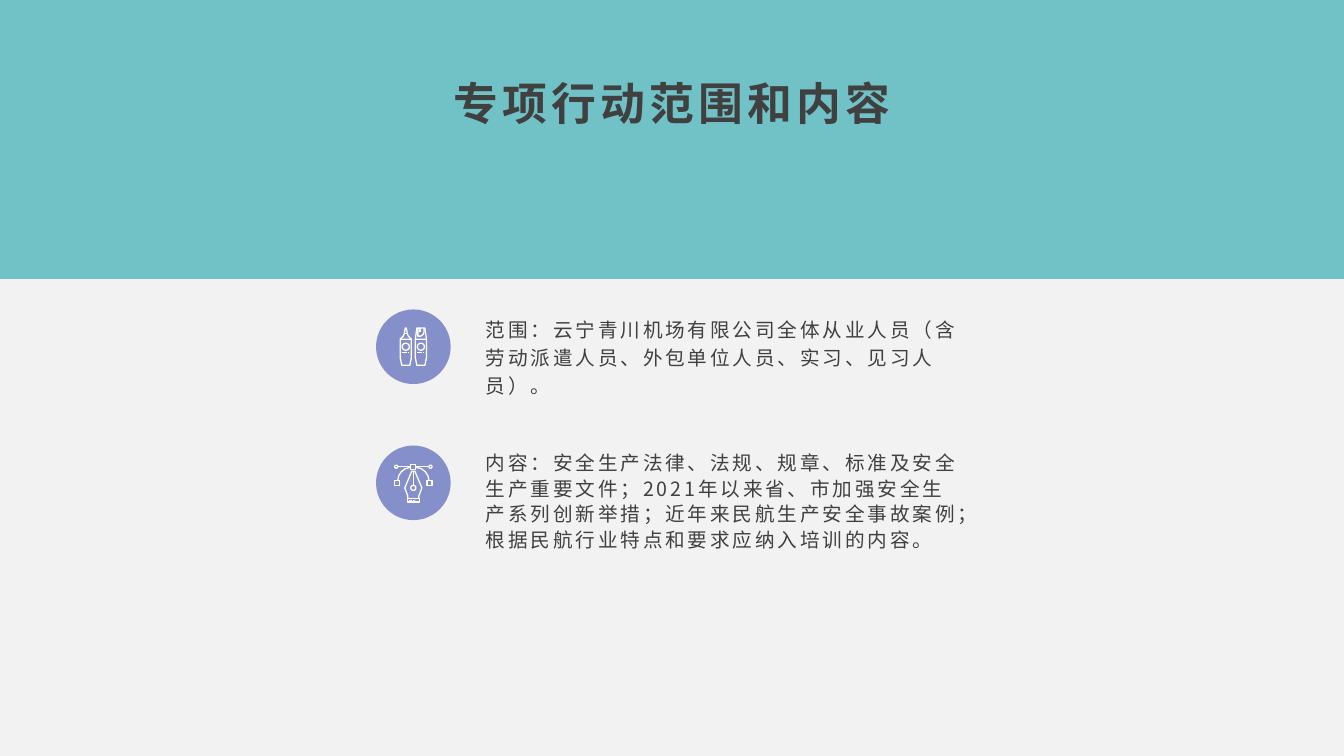
from dataclasses import dataclass
from math import cos, pi, sin

from lxml.etree import SubElement
from pptx import Presentation
from pptx.dml.color import RGBColor
from pptx.enum.shapes import MSO_SHAPE
from pptx.enum.text import MSO_ANCHOR, PP_ALIGN
from pptx.oxml.ns import qn
from pptx.util import Inches, Pt

Point = tuple[float, float]
Stroke = list[Point]


@dataclass(frozen=True)
class Theme:
    font: str = "Noto Sans CJK SC"
    teal: str = "70C2C7"
    panel: str = "F2F2F2"
    badge: str = "8590CA"
    white: str = "FFFFFF"
    text: str = "404040"
    title_size: float = 32
    body_size: float = 14
    icon_line: float = 0.9


@dataclass(frozen=True)
class Item:
    text: str
    text_top: float
    text_height: float
    leading: float
    badge_top: float
    icon: list[Stroke]


THEME = Theme()
BADGE_LEFT, BADGE_SIZE = 3.73, 0.74


# Icon strokes, in inches from the centre of the badge
def ring(x: float, y: float, radius: float) -> Stroke:
    angles = [2 * pi * i / 24 for i in range(25)]
    return [(x + radius * cos(a), y + radius * sin(a)) for a in angles]


def box(left: float, top: float, right: float, bottom: float) -> Stroke:
    return [(left, top), (right, top), (right, bottom), (left, bottom), (left, top)]


def mirror(stroke: Stroke) -> Stroke:
    return [(-x, y) for x, y in stroke]


def bottle_icon() -> list[Stroke]:
    strokes: list[Stroke] = []
    for x in (-0.075, 0.075):
        body = [(-0.055, -0.075), (-0.055, 0.11), (-0.04, 0.185), (0.04, 0.185),
                (0.055, 0.11), (0.055, -0.075), (-0.055, -0.075)]
        dashes = [[(-0.035, 0.055), (0.015, 0.055)], [(0.025, 0.055), (0.035, 0.055)]]
        for stroke in [body, *dashes]:
            strokes.append([(x + px, y) for px, y in stroke])
        strokes.append(ring(x, 0, 0.035))
    neck = [(-0.13, -0.075), (-0.1, -0.105), (-0.09, -0.13), (-0.085, -0.16),
            (-0.08, -0.185), (-0.07, -0.185), (-0.065, -0.16), (-0.06, -0.13),
            (-0.05, -0.105), (-0.02, -0.075)]
    collar = [(-0.09, -0.13), (-0.06, -0.13)]
    cap = [(0.02, -0.075), (0.035, -0.185), (0.115, -0.185), (0.13, -0.075)]
    tip = [(0.045, -0.185), (0.045, -0.105), (0.075, -0.105), (0.095, -0.12),
           (0.105, -0.14), (0.105, -0.185)]
    slot = [(0.065, -0.185), (0.065, -0.145)]
    return strokes + [neck, collar, cap, tip, slot]


def pen_icon() -> list[Stroke]:
    half_nib = [(0, -0.115), (0.015, -0.115), (0.085, 0.05), (0.055, 0.13), (0.055, 0.155)]
    handle = [(0.025, -0.16), (0.155, -0.16)]
    arc = [(0.025, -0.155), (0.08, -0.14), (0.12, -0.11), (0.145, -0.07), (0.155, -0.025)]
    side = [half_nib, handle, arc, ring(0.17, -0.16, 0.015),
            box(0.135, -0.025, 0.185, 0.025)]
    middle = [box(-0.025, -0.185, 0.025, -0.135), box(-0.06, 0.155, 0.06, 0.19),
              [(0, -0.115), (0, 0.025)], ring(0, 0.05, 0.025),
              [(-0.045, 0.175), (-0.01, 0.175)], [(0, 0.175), (0.02, 0.175)]]
    return side + [mirror(s) for s in side] + middle


ITEMS = [
    Item("范围：云宁青川机场有限公司全体从业人员（含劳动派遣人员、外包单位人员、实习、见习人员）。",
         3.06, 1.2, 20, 3.07, bottle_icon()),
    Item("内容：安全生产法律、法规、规章、标准及安全生产重要文件；2021年以来省、市加强安全生产系列创新举措；"
         "近年来民航生产安全事故案例；根据民航行业特点和要求应纳入培训的内容。",
         4.4, 1.22, 18.4, 4.42, pen_icon()),
]


def add_text(shapes, text: str, at: tuple[float, float, float, float], *, size: float,
             tracking: float, bold: bool = False, align=PP_ALIGN.LEFT,
             anchor=MSO_ANCHOR.TOP, leading: float | None = None, after: float = 0,
             inset: tuple[float, float] = (0.1, 0.05)) -> None:
    tf = shapes.add_textbox(*map(Inches, at)).text_frame
    tf.word_wrap = True
    tf.vertical_anchor = anchor
    tf.margin_left = tf.margin_right = Inches(inset[0])
    tf.margin_top = tf.margin_bottom = Inches(inset[1])
    p = tf.paragraphs[0]
    p.alignment = align
    p.space_after = Pt(after)
    if leading:
        p.line_spacing = Pt(leading)
    r = p.add_run()
    r.text = text
    r.font.size, r.font.bold, r.font.name = Pt(size), bold, THEME.font
    r.font.color.rgb = RGBColor.from_string(THEME.text)
    # Letter spacing and East Asian typeface
    rPr = r._r.get_or_add_rPr()
    rPr.set("spc", str(int(tracking * 100)))
    SubElement(rPr, qn("a:ea"), typeface=THEME.font)


def add_filled(shapes, kind: MSO_SHAPE, at: tuple[float, float, float, float],
               color: str) -> None:
    sp = shapes.add_shape(kind, *map(Inches, at))
    sp.shadow.inherit = False
    sp.fill.solid()
    sp.fill.fore_color.rgb = RGBColor.from_string(color)
    sp.line.fill.background()


def add_icon(shapes, strokes: list[Stroke], cx: float, cy: float) -> None:
    placed = [[(Inches(cx + x), Inches(cy + y)) for x, y in s] for s in strokes]
    builder = shapes.build_freeform(*placed[0][0])
    for i, stroke in enumerate(placed):
        if i:
            builder.move_to(*stroke[0])
        builder.add_line_segments(stroke[1:], close=False)
    sp = builder.convert_to_shape()
    sp.shadow.inherit = False
    sp.fill.background()
    sp.line.color.rgb = RGBColor.from_string(THEME.white)
    sp.line.width = Pt(THEME.icon_line)


def add_item(s, item: Item) -> None:
    group = s.shapes.add_group_shape()
    add_filled(group.shapes, MSO_SHAPE.OVAL,
               (BADGE_LEFT, item.badge_top, BADGE_SIZE, BADGE_SIZE), THEME.badge)
    add_icon(group.shapes, item.icon, BADGE_LEFT + BADGE_SIZE / 2,
             item.badge_top + BADGE_SIZE / 2)
    add_text(s.shapes, item.text, (4.72, item.text_top, 4.89, item.text_height),
             size=THEME.body_size, tracking=2, leading=item.leading)


def main() -> None:
    prs = Presentation()
    prs.slide_width, prs.slide_height = Inches(13.33), Inches(7.5)
    s = prs.slides.add_slide(prs.slide_layouts[6])
    # Teal background and light lower panel
    s.background.fill.solid()
    s.background.fill.fore_color.rgb = RGBColor.from_string(THEME.teal)
    add_filled(s.shapes, MSO_SHAPE.RECTANGLE, (0, 2.77, 13.33, 4.73), THEME.panel)
    # Title
    add_text(s.shapes, "专项行动范围和内容", (0.5, 0.67, 12.33, 0.69),
             size=THEME.title_size, tracking=3, bold=True, align=PP_ALIGN.CENTER,
             anchor=MSO_ANCHOR.MIDDLE, after=8, inset=(0.08, 0.04))
    # Scope and content items
    for item in ITEMS:
        add_item(s, item)
    prs.save("out.pptx")


if __name__ == "__main__":
    main()
